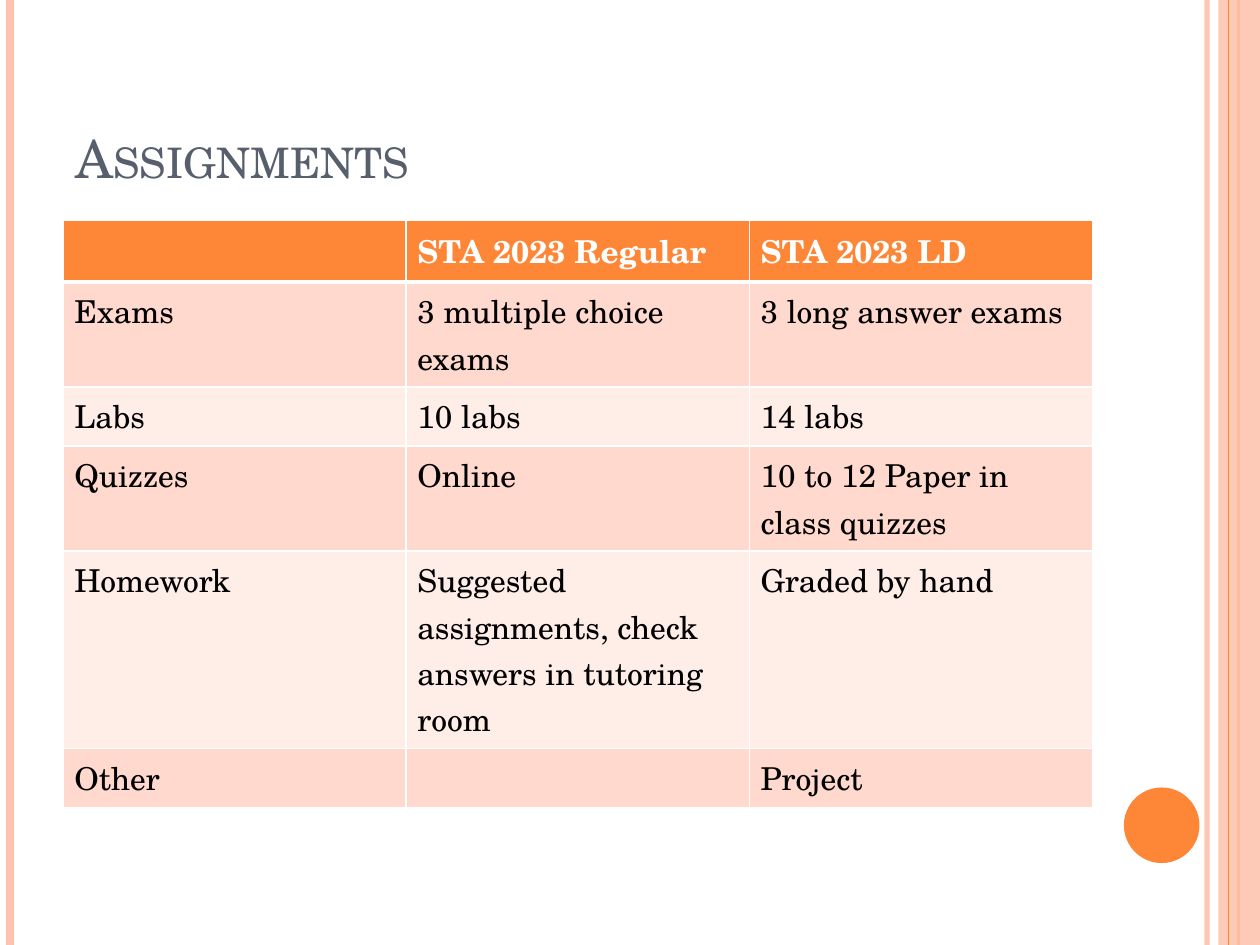
"""Build the Assignments slide comparing two sections of a statistics course."""
from lxml import etree
from pptx import Presentation
from pptx.dml.color import RGBColor
from pptx.enum.shapes import MSO_CONNECTOR, MSO_SHAPE
from pptx.enum.text import MSO_ANCHOR, MSO_AUTO_SIZE, PP_ALIGN
from pptx.oxml.ns import qn
from pptx.util import Inches, Pt

STRAIGHT = MSO_CONNECTOR.STRAIGHT
RECTANGLE, OVAL = MSO_SHAPE.RECTANGLE, MSO_SHAPE.OVAL
BOTTOM, LEFT, NO_FIT = MSO_ANCHOR.BOTTOM, PP_ALIGN.LEFT, MSO_AUTO_SIZE.NONE
ORANGE = RGBColor(0xFE, 0x86, 0x37)
PEACH = RGBColor(0xFE, 0xC3, 0xAE)
SLATE = RGBColor(0x57, 0x5F, 0x6D)
DARK_BAND = RGBColor(0xFF, 0xD9, 0xCE)
LIGHT_BAND = RGBColor(0xFF, 0xED, 0xE8)
WHITE = RGBColor(0xFF, 0xFF, 0xFF)
BLACK = RGBColor(0, 0, 0)
FONT = "TeX Gyre Schola"
MARGIN, CONTENT_WIDTH = Inches(0.5), Inches(8.17)


def set_alpha(properties, percent):
    for color in properties.iter(qn("a:srgbClr")):
        etree.SubElement(color, qn("a:alpha")).set("val", str(percent * 1000))


def add_text(text_frame, text, size, color, bold=False):
    run = text_frame.paragraphs[0].add_run()
    run.text = text
    run.font.name = FONT
    run.font.size = Pt(size)
    run.font.bold = bold
    run.font.color.rgb = color
    return run


deck = Presentation()
deck.slide_width, deck.slide_height = Inches(10), Inches(7.5)
slide = deck.slides.add_slide(deck.slide_layouts[5])
shapes = slide.shapes

heading = shapes.title
heading.left, heading.top = MARGIN, Inches(0.3)
heading.width, heading.height = CONTENT_WIDTH, Inches(1.25)
heading_frame = heading.text_frame
heading_frame.vertical_anchor = BOTTOM
heading_frame.auto_size = NO_FIT
heading_frame.paragraphs[0].alignment = LEFT
heading_run = add_text(heading_frame, "Assignments", 30, SLATE)
heading_run.font._element.set("cap", "small")

stripes = [
    (9.58, PEACH, 3, 93),
    (0.08, PEACH, 4.5, 100),
    (9.83, ORANGE, 1.5, 100),
    (9.75, ORANGE, 0.75, 100),
]
for x, color, weight, opacity in stripes:
    stripe = shapes.add_connector(STRAIGHT, Inches(x), 0, Inches(x), deck.slide_height)
    stripe.line.color.rgb = color
    stripe.line.width = Pt(weight)
    stripe_properties = stripe._element.spPr
    set_alpha(stripe_properties, opacity)
    etree.SubElement(stripe_properties, qn("a:effectLst"))
    if x == 9.83:
        side_band = shapes.add_shape(
            RECTANGLE, Inches(9.67), 0, Inches(0.33), deck.slide_height)
        side_band.shadow.inherit = False
        side_band.fill.solid()
        side_band.fill.fore_color.rgb = PEACH
        side_band.line.fill.background()
        set_alpha(side_band._element.spPr, 87)

page_dot = shapes.add_shape(OVAL, Inches(8.92), Inches(6.25), Inches(0.6), Inches(0.6))
page_dot.shadow.inherit = False
page_dot.fill.solid()
page_dot.fill.fore_color.rgb = ORANGE
page_dot.line.fill.background()

comparison = [
    ("", "STA 2023 Regular", "STA 2023 LD"),
    ("Exams", "3 multiple choice exams", "3 long answer exams"),
    ("Labs", "10 labs", "14 labs"),
    ("Quizzes", "Online", "10 to 12 Paper in class quizzes"),
    ("Homework", "Suggested assignments, check answers in tutoring room",
     "Graded by hand"),
    ("Other", "", "Project"),
]
row_count, column_count = len(comparison), len(comparison[0])
row_height = Inches(0.41)
table = shapes.add_table(row_count, column_count, MARGIN, Inches(1.75),
                         CONTENT_WIDTH, row_height * row_count).table
for row_index, entries in enumerate(comparison):
    is_header = row_index == 0
    band = ORANGE if is_header else DARK_BAND if row_index % 2 else LIGHT_BAND
    for column_index, entry in enumerate(entries):
        cell = table.cell(row_index, column_index)
        cell_properties = cell._tc.get_or_add_tcPr()
        for side in "LRTB":
            thick = (row_index, side) in [(0, "B"), (1, "T")]
            border = etree.SubElement(cell_properties, qn(f"a:ln{side}"))
            border.set("w", str(Pt(3 if thick else 1)))
            border_fill = etree.SubElement(border, qn("a:solidFill"))
            etree.SubElement(border_fill, qn("a:srgbClr")).set("val", str(WHITE))
        cell.fill.solid()
        cell.fill.fore_color.rgb = band
        cell.margin_left = cell.margin_right = Inches(0.09)
        cell.margin_top = cell.margin_bottom = Inches(0.05)
        if entry:
            add_text(cell.text_frame, entry, 18, WHITE if is_header else BLACK, is_header)

deck.save("out.pptx")
